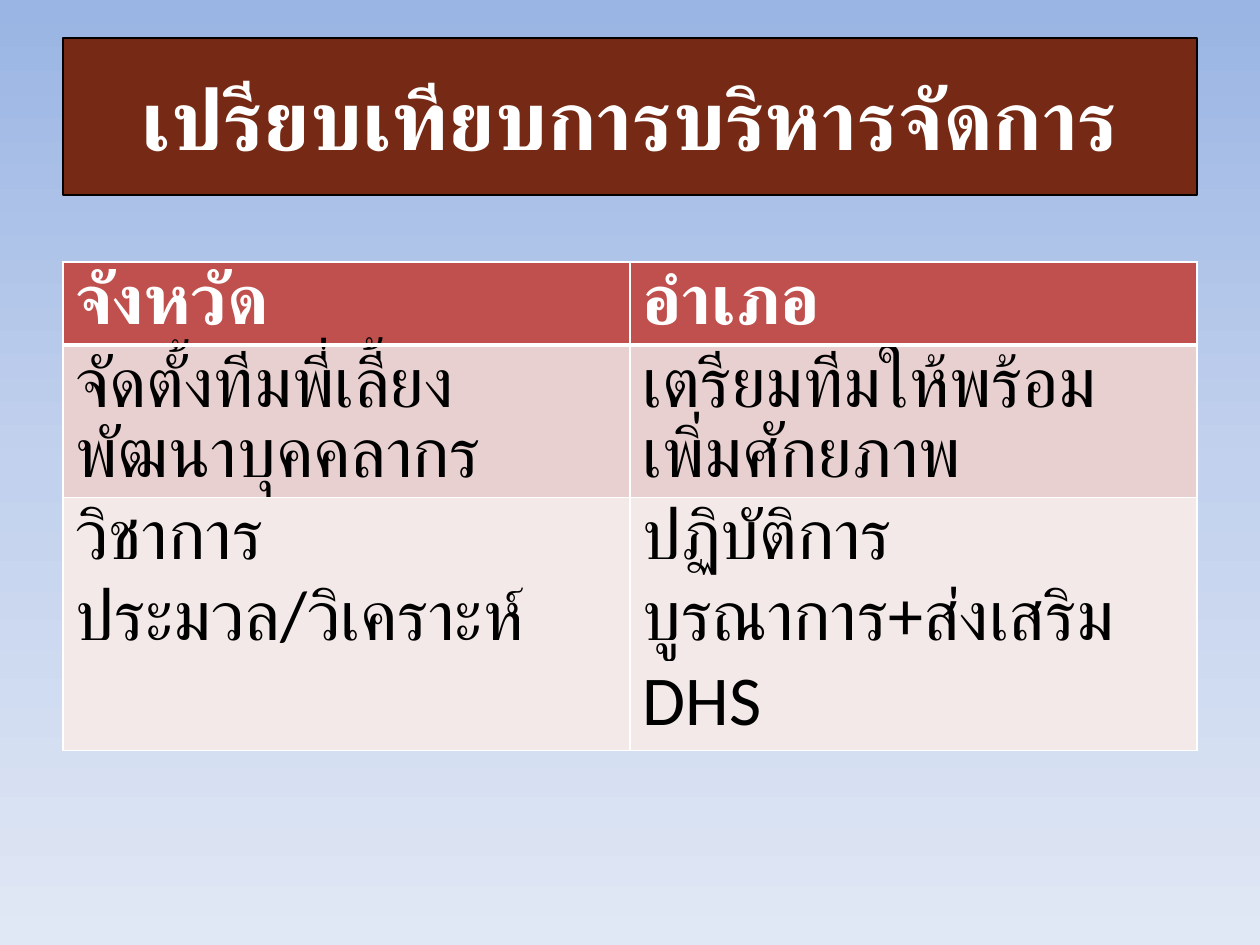
from lxml.etree import SubElement
from pptx import Presentation
from pptx.dml.color import RGBColor as RGB
from pptx.enum.lang import MSO_LANGUAGE_ID as Lang
from pptx.enum.text import MSO_ANCHOR as Anchor, PP_ALIGN as Align
from pptx.oxml.ns import qn
from pptx.util import Pt

PX = 914400 / 126
WHITE = RGB(255, 255, 255)
BLACK = RGB(0, 0, 0)
BROWN = RGB(0x76, 0x2A, 0x15)
RED = RGB(0xC0, 0x50, 0x4D)
PINK = RGB(0xE8, 0xD0, 0xD0)
PALE = RGB(0xF4, 0xE9, 0xE9)
SKY = [(0, RGB(0x9A, 0xB5, 0xE4)), (50, RGB(0xC2, 0xD1, 0xED)),
       (100, RGB(0xE1, 0xE8, 0xF5))]
TITLE = "เปรียบเทียบการบริหารจัดการ"
ROWS = [
    (83, RED, ["จังหวัด", "อำเภอ"]),
    (152, PINK, ["จัดตั้งทีมพี่เลี้ยง\nพัฒนาบุคคลากร",
                 "เตรียมทีมให้พร้อม\nเพิ่มศักยภาพ"]),
    (253, PALE, ["วิชาการ\nประมวล/วิเคราะห์",
                 "ปฏิบัติการ\nบูรณาการ+ส่งเสริม DHS"]),
]


def px(num):
    """Turn px into EMU."""
    return round(num * PX)


def write(frame, text, font="Calibri", size=40, color=BLACK, bold=False,
          align=Align.LEFT):
    """Fill a text frame, one paragraph for each line of text."""
    frame.text = text
    for para in frame.paragraphs:
        para.alignment = align
        for run in para.runs:
            face = run.font
            face.name, face.size, face.bold = font, Pt(size), bold
            face.color.rgb = color
            face.language_id = Lang.THAI


def paint(slide):
    """Give the slide its sky gradient, from top to bottom."""
    fill = slide.background.fill
    fill.gradient()
    fill.gradient_angle = 270
    stops = slide.element.find(".//" + qn("a:gsLst"))
    for stop in list(stops):
        stops.remove(stop)
    for pos, color in SKY:
        stop = SubElement(stops, qn("a:gs"), pos=str(pos * 1000))
        SubElement(stop, qn("a:srgbClr"), val=str(color))


def edge(cell, side, width):
    """Draw one white border of a cell."""
    line = SubElement(cell.get_or_add_tcPr(), qn("a:" + side),
                      w=str(Pt(width)))
    fill = SubElement(line, qn("a:solidFill"))
    SubElement(fill, qn("a:srgbClr"), val=str(WHITE))


def banner(slide, left, top, width, height):
    """Place the title in its brown box."""
    box = slide.shapes.title
    box.left, box.top = px(left), px(top)
    box.width, box.height = px(width), px(height)
    box.fill.solid()
    box.fill.fore_color.rgb = BROWN
    box.line.color.rgb = BLACK
    box.line.width = Pt(1)
    box.text_frame.vertical_anchor = Anchor.MIDDLE
    write(box.text_frame, TITLE, font="Lato", size=48, color=WHITE,
          bold=True, align=Align.CENTER)


def grid(slide, left, top, width):
    """Place the table that compares province and district."""
    high = sum(row[0] for row in ROWS)
    table = slide.shapes.add_table(len(ROWS), 2, px(left), px(top),
                                   px(width), px(high)).table
    for at, (tall, tint, texts) in enumerate(ROWS):
        head = at == 0
        table.rows[at].height = px(tall)
        for col, text in enumerate(texts):
            cell = table.cell(at, col)
            write(cell.text_frame, text, color=WHITE if head else BLACK,
                  bold=head)
            for side in ("lnL", "lnR", "lnT", "lnB"):
                thick = (head and side == "lnB") or (at == 1 and side == "lnT")
                edge(cell._tc, side, 3 if thick else 1)
            cell.fill.solid()
            cell.fill.fore_color.rgb = tint


def main():
    """Build and save the slide."""
    deck = Presentation()
    deck.slide_width, deck.slide_height = px(1260), px(945)
    slide = deck.slides.add_slide(deck.slide_layouts[5])
    paint(slide)
    banner(slide, 63, 38, 1134, 157)
    grid(slide, 63, 262, 1134)
    deck.save("out.pptx")


if __name__ == "__main__":
    main()
